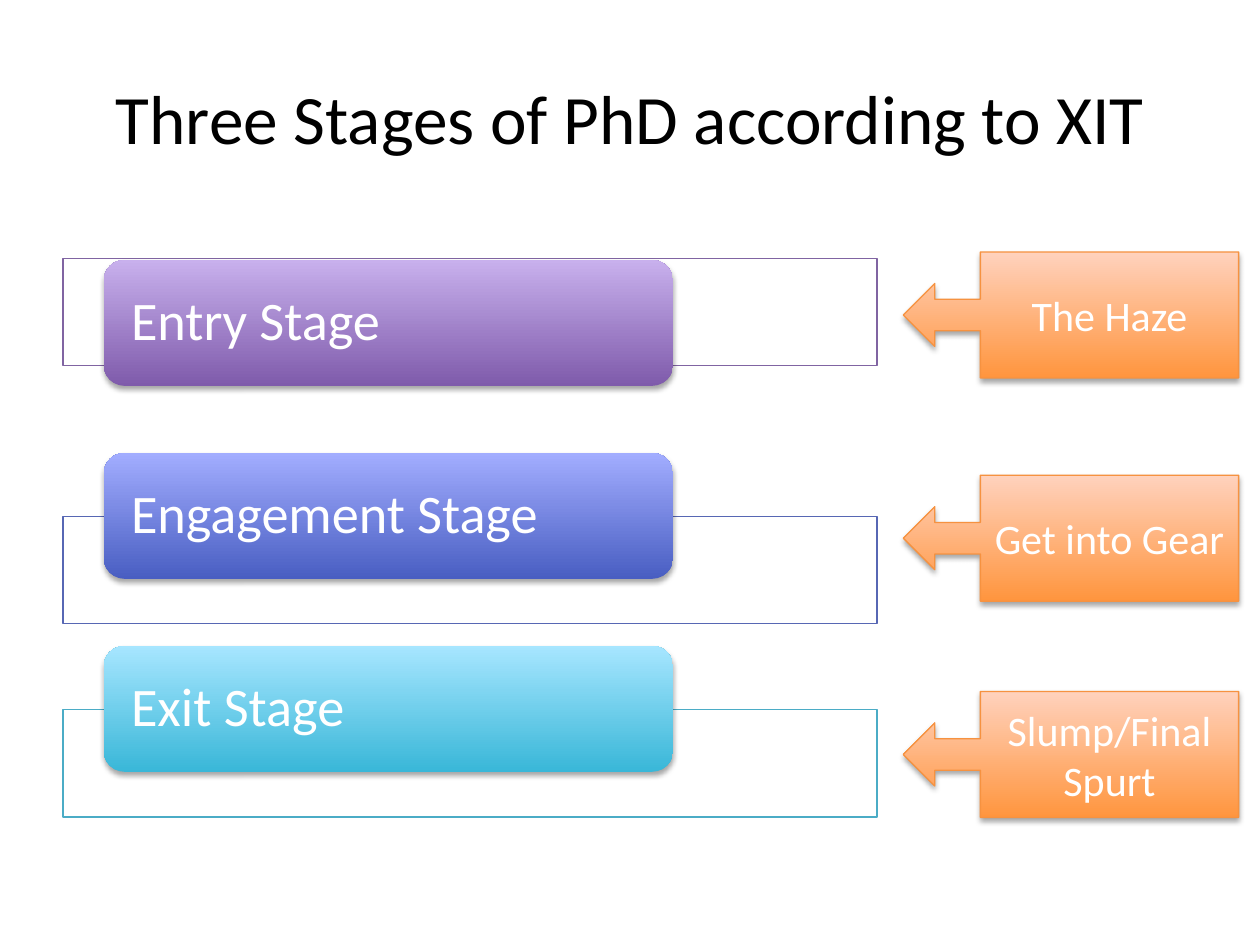
import dataclasses

import lxml.etree
import pptx
import pptx.dml.color
import pptx.enum.shapes
import pptx.enum.text
import pptx.oxml.ns
import pptx.util

Cm = pptx.util.Cm
Pt = pptx.util.Pt
Shape = pptx.enum.shapes.MSO_SHAPE
Align = pptx.enum.text.PP_ALIGN


@dataclasses.dataclass(frozen=True)
class Theme:
    font: str = "Calibri"
    title_color: str = "000000"
    light: str = "FFFFFF"
    shadow: str = "000000"
    callout_top: str = "FFD2BD"
    callout_bottom: str = "FF953E"
    callout_line: str = "F69240"
    title_size: float = 39.6
    stage_size: float = 31
    callout_size: float = 24
    line_width: float = 0.75


THEME = Theme()

# name, frame top, stage top, frame line, gradient top, gradient bottom, nickname, callout top
STAGES = [
    ("Entry Stage", 5.21, 5.24, "8064A2", "C8B0ED", "7F5BAB", "The Haze", 5.08),
    ("Engagement Stage", 10.41, 9.13, "5767B4", "A2ADFF", "495EC2", "Get into Gear", 9.58),
    ("Exit Stage", 14.31, 13.02, "4BACC6", "A7E6FF", "39B7D8", "Slump/Final Spurt", 13.94),
]


def rgb(code):
    return pptx.dml.color.RGBColor.from_string(code)


def add_child(parent, tag, **attributes):
    return lxml.etree.SubElement(parent, pptx.oxml.ns.qn(tag), attributes)


def write_text(shape, text, size, color, align):
    frame = shape.text_frame
    frame.text = text
    frame.word_wrap = True
    frame.vertical_anchor = pptx.enum.text.MSO_ANCHOR.MIDDLE
    paragraph = frame.paragraphs[0]
    paragraph.alignment = align
    font = paragraph.runs[0].font
    font.name = THEME.font
    font.size = Pt(size)
    font.color.rgb = rgb(color)


def set_line(shape, color):
    shape.line.color.rgb = rgb(color)
    shape.line.width = Pt(THEME.line_width)


def set_gradient(shape, top_color, bottom_color):
    shape.fill.gradient()
    shape.fill.gradient_angle = 90
    for stop, color in zip(shape.fill.gradient_stops, (bottom_color, top_color)):
        stop.color.rgb = rgb(color)


def cast_shadow(shape):
    shape.shadow.inherit = False
    effects = shape._element.spPr.find(pptx.oxml.ns.qn("a:effectLst"))
    shadow = add_child(effects, "a:outerShdw", blurRad=str(Pt(3.1)), dist=str(Pt(1.8)),
                       dir="5400000", rotWithShape="0")
    color = add_child(shadow, "a:srgbClr", val=THEME.shadow)
    add_child(color, "a:alpha", val="35000")


def add_title(slide, text):
    title = slide.shapes.add_textbox(Cm(1.27), Cm(0.76), Cm(22.86), Cm(3.18))
    write_text(title, text, THEME.title_size, THEME.title_color, Align.CENTER)


def add_frame(slide, top, color):
    frame = slide.shapes.add_shape(Shape.RECTANGLE, Cm(1.27), Cm(top), Cm(16.41), Cm(2.16))
    frame.shadow.inherit = False
    frame.fill.solid()
    frame.fill.fore_color.rgb = rgb(THEME.light)
    fill_color = frame._element.spPr.find(".//" + pptx.oxml.ns.qn("a:srgbClr"))
    add_child(fill_color, "a:alpha", val="90000")
    set_line(frame, color)


def add_stage(slide, name, top, top_color, bottom_color):
    stage = slide.shapes.add_shape(Shape.ROUNDED_RECTANGLE, Cm(2.09), Cm(top), Cm(11.48), Cm(2.54))
    set_gradient(stage, top_color, bottom_color)
    stage.line.fill.background()
    cast_shadow(stage)
    write_text(stage, name, THEME.stage_size, THEME.light, Align.LEFT)
    text = stage.text_frame
    text.margin_left = text.margin_right = Cm(0.43)
    text.margin_top = text.margin_bottom = 0
    text.paragraphs[0].line_spacing = 0.9


def add_callout(slide, nickname, top):
    callout = slide.shapes.add_shape(Shape.LEFT_ARROW_CALLOUT, Cm(18.21), Cm(top), Cm(6.76), Cm(2.54))
    callout.adjustments[3] = 0.77
    set_gradient(callout, THEME.callout_top, THEME.callout_bottom)
    set_line(callout, THEME.callout_line)
    cast_shadow(callout)
    write_text(callout, nickname, THEME.callout_size, THEME.light, Align.CENTER)


def main():
    deck = pptx.Presentation()
    deck.slide_width, deck.slide_height = Cm(25.4), Cm(19.05)
    slide = deck.slides.add_slide(deck.slide_layouts[6])
    add_title(slide, "Three Stages of PhD according to XIT")
    for name, frame_top, stage_top, line, light, dark, nickname, callout_top in STAGES:
        add_frame(slide, frame_top, line)
        add_stage(slide, name, stage_top, light, dark)
        add_callout(slide, nickname, callout_top)
    deck.save("out.pptx")


if __name__ == "__main__":
    main()
